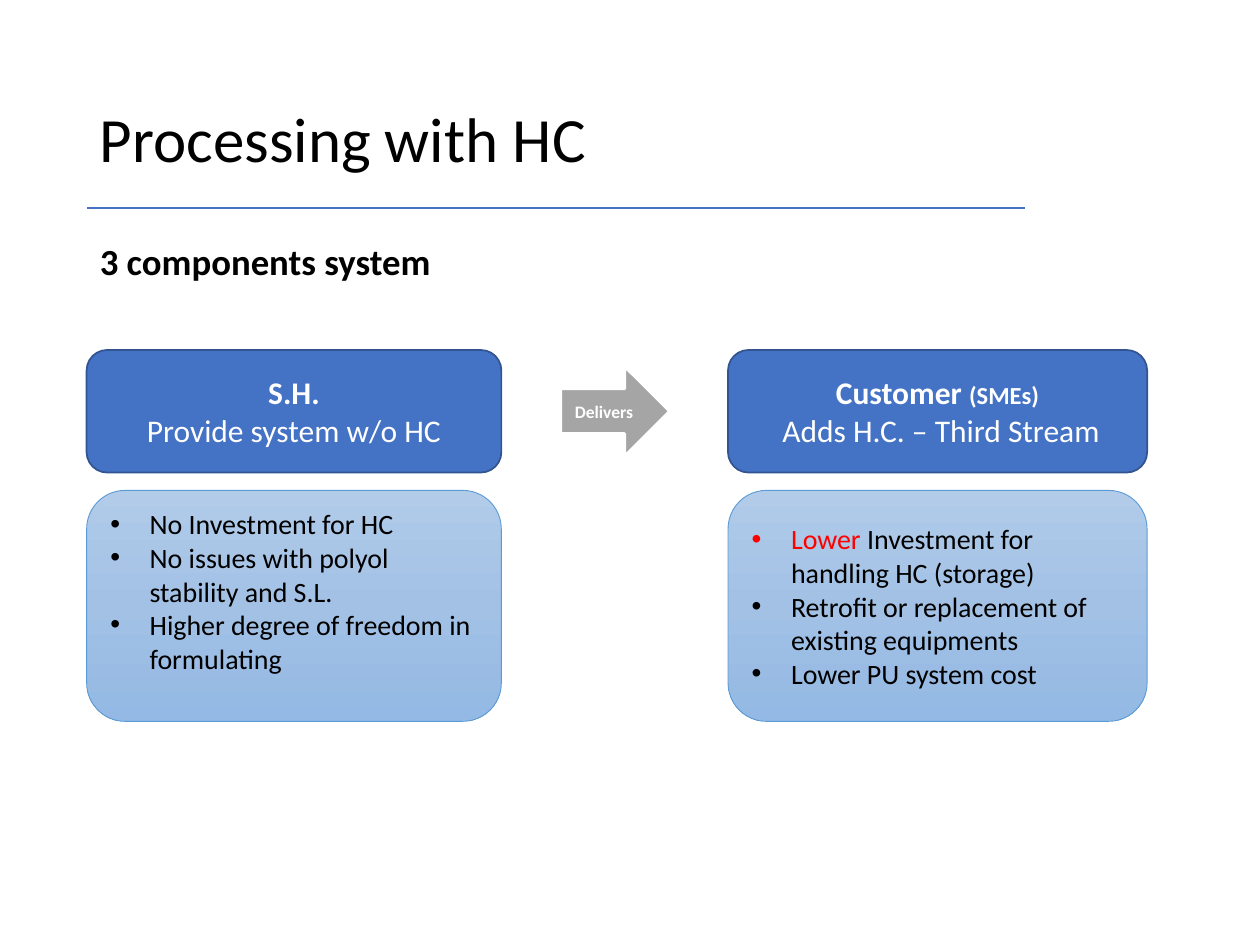
from copy import deepcopy

from lxml import etree
from pptx import Presentation, util as u
from pptx.dml.color import RGBColor
from pptx.enum import shapes, text
from pptx.oxml import ns

HUES = {
    "ink": "000000", "white": "FFFFFF", "red": "FF0000", "blue": "4472C4",
    "edge": "325491", "grey": "A5A5A5", "rim": "5B9BD5",
    "top": "B1CBE9", "mid": "A3C1E5", "low": "93B9E4",
}
FORM = shapes.MSO_SHAPE
MID = text.MSO_ANCHOR.MIDDLE
TOP = text.MSO_ANCHOR.TOP
LEFT = text.PP_ALIGN.LEFT
CENTER = text.PP_ALIGN.CENTER


def hue(name):
    return RGBColor.from_string(HUES[name])


class Deck:
    font = "Calibri"
    hang = u.Pt(22.5)

    def __init__(self, wide, high):
        self.prs = Presentation()
        self.prs.slide_width, self.prs.slide_height = u.Pt(wide), u.Pt(high)
        self.slide = self.prs.slides.add_slide(self.prs.slide_layouts[6])

    def words(self, shape, paras, align=LEFT, anchor=MID, bullet=False, space=None):
        """Each paragraph is a list of runs: (words, size, hue, bold)."""
        frame = shape.text_frame
        frame.word_wrap = True
        frame.vertical_anchor = anchor
        for i, runs in enumerate(paras):
            para = frame.add_paragraph() if i else frame.paragraphs[0]
            para.alignment = align
            para.line_spacing = space
            if bullet:
                self.bullet(para)
            for words, size, tint, bold in runs:
                run = para.add_run()
                run.text = words
                run.font.name = self.font
                run.font.size = u.Pt(size)
                run.font.bold = bold
                run.font.color.rgb = hue(tint)
        return frame

    def bullet(self, para):
        props = para._p.get_or_add_pPr()
        props.set("marL", str(self.hang))
        props.set("indent", str(-self.hang))
        etree.SubElement(props, ns.qn("a:buFont")).set("typeface", "Arial")
        etree.SubElement(props, ns.qn("a:buChar")).set("char", "•")

    def label(self, box, paras, **style):
        shape = self.slide.shapes.add_textbox(*map(u.Pt, box))
        return self.words(shape, paras, **style)

    def rule(self, x1, y1, x2, y2, tint, width):
        line = self.slide.shapes.add_connector(
            shapes.MSO_CONNECTOR.STRAIGHT, *map(u.Pt, (x1, y1, x2, y2)))
        line.line.color.rgb = hue(tint)
        line.line.width = u.Pt(width)
        etree.SubElement(line._element.spPr, ns.qn("a:effectLst"))

    def block(self, form, box, fill, edge, width, paras, **style):
        """A fill is one hue, or three hues from top to bottom."""
        shape = self.slide.shapes.add_shape(form, *map(u.Pt, box))
        shape.shadow.inherit = False
        if isinstance(fill, str):
            shape.fill.solid()
            shape.fill.fore_color.rgb = hue(fill)
        else:
            self.fade(shape.fill, fill)
        shape.line.color.rgb = hue(edge)
        shape.line.width = u.Pt(width)
        return self.words(shape, paras, **style)

    def fade(self, fill, tints):
        fill.gradient()
        fill.gradient_angle = 270
        first = fill.gradient_stops[0]._gs
        first.addnext(deepcopy(first))
        for i, (stop, tint) in enumerate(zip(fill.gradient_stops, tints)):
            stop.position = i / (len(tints) - 1)
            stop.color.rgb = hue(tint)


def main():
    deck = Deck(720, 540)

    # Title, rule and subtitle
    deck.label((50, 29, 537, 104), [[("Processing with HC", 36, "ink", False)]],
               space=0.9)
    deck.rule(50, 119, 586, 119, "blue", 1)
    deck.label((50, 133, 546, 32.5), [[("3 components system", 21, "ink", True)]],
               anchor=TOP)

    # Two columns: left, width, heading, points, room under the points
    cols = [
        (49.5, 237,
         [[("S.H.", 18, "white", True)],
          [("Provide system w/o HC", 18, "white", False)]],
         [[("No Investment for HC", 16, "ink", False)],
          [("No issues with polyol stability and S.L.", 16, "ink", False)],
          [("Higher degree of freedom in formulating", 16, "ink", False)]],
         20.7),
        (416, 239.5,
         [[("Customer ", 18, "white", True), ("(SMEs)", 14, "white", True)],
          [(" Adds H.C. – Third Stream", 18, "white", False)]],
         [[("Lower ", 16, "red", False),
           ("Investment for handling HC (storage)", 16, "ink", False)],
          [("Retrofit or replacement of existing equipments", 16, "ink", False)],
          [("Lower PU system cost", 16, "ink", False)]],
         3.6),
    ]
    for x, wide, head, points, room in cols:
        deck.block(FORM.ROUNDED_RECTANGLE, (x, 200, wide, 70), "blue", "edge", 1,
                   head, align=CENTER)
        frame = deck.block(FORM.ROUNDED_RECTANGLE, (x, 280.2, wide, 132),
                           ("top", "mid", "low"), "rim", 0.5, points, bullet=True)
        frame.margin_bottom = u.Pt(room)

    # Arrow between the headings
    deck.block(FORM.RIGHT_ARROW, (320.5, 209.5, 62, 51), "grey", "white", 1.5,
               [[("Delivers", 10, "white", True)]], align=CENTER)

    deck.prs.save("out.pptx")


if __name__ == "__main__":
    main()
